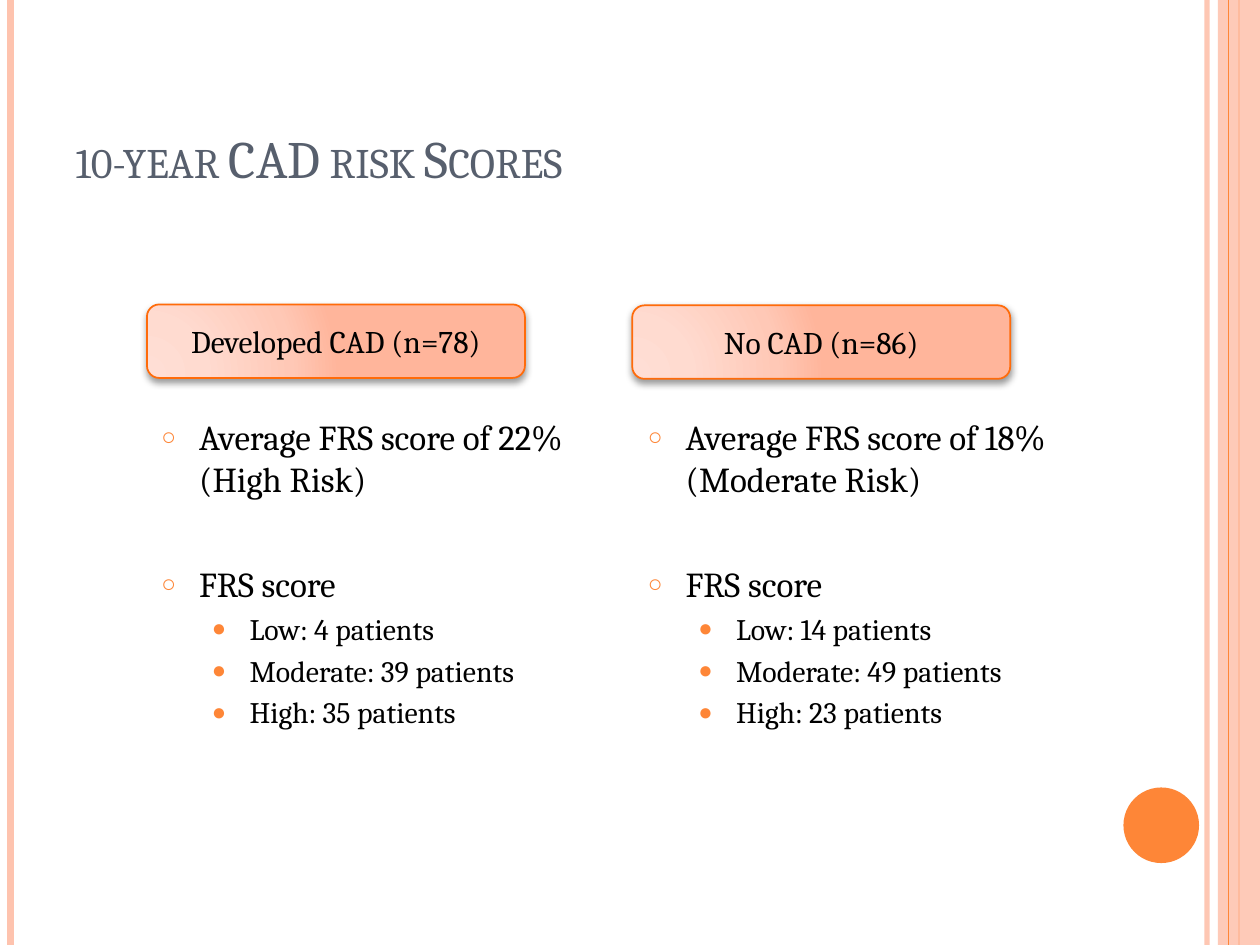
from lxml import etree
from pptx import Presentation
from pptx.dml.color import RGBColor
from pptx.enum.shapes import MSO_CONNECTOR, MSO_SHAPE
from pptx.enum.text import MSO_ANCHOR, MSO_AUTO_SIZE, PP_ALIGN
from pptx.oxml import parse_xml
from pptx.oxml.ns import qn
from pptx.util import Pt

STRAIGHT = MSO_CONNECTOR.STRAIGHT
LEFT, CENTER = PP_ALIGN.LEFT, PP_ALIGN.CENTER
TOP, MIDDLE, BOTTOM = MSO_ANCHOR.TOP, MSO_ANCHOR.MIDDLE, MSO_ANCHOR.BOTTOM
NAMESPACE = 'xmlns:a="http://schemas.openxmlformats.org/drawingml/2006/main"'
FONT = "Cambria"
WIDTH, HEIGHT = 720, 540
COLORS = {
    "accent": "FE8637", "stripe": "FEC3AE", "title": "575F6D",
    "text": "000000", "outline": "FF6B0A",
}
GRADIENT = {0: "FFDED5", 30: "FFDBD0", 75: "FFC8B6", 100: "FFB59B"}
LEVELS = [
    {"size": 20, "margin": 21.6, "bullet": "○", "bullet_size": 70, "before": 6},
    {"size": 17, "margin": 50.4, "bullet": "●", "bullet_size": 80, "before": 3.4},
]
BULLET_INDENT = 21.6
GROUP_GAP = 36
COLUMNS = [
    {
        "label": "Developed CAD (n=78)",
        "label_box": (84, 174, 216, 42),
        "list_box": (85, 234, 245, 204),
        "items": [(0, "Average FRS score of 22% (High Risk)"), (0, "FRS score"),
                  (1, "Low: 4 patients"), (1, "Moderate: 39 patients"),
                  (1, "High: 35 patients")],
    },
    {
        "label": "No CAD (n=86)",
        "label_box": (361.3, 174.5, 216, 42),
        "list_box": (363, 234, 249, 186),
        "items": [(0, "Average FRS score of 18% (Moderate Risk)"), (0, "FRS score"),
                  (1, "Low: 14 patients"), (1, "Moderate: 49 patients"),
                  (1, "High: 23 patients")],
    },
]


def color(name):
    return RGBColor.from_string(COLORS[name])


def place(shape, box):
    for name, value in zip(("left", "top", "width", "height"), box):
        setattr(shape, name, Pt(value))


def add_text(paragraph, text, size, color_name="text"):
    run = paragraph.add_run()
    run.text = text
    values = {"name": FONT, "size": Pt(size), "bold": False}
    for name, value in values.items():
        setattr(run.font, name, value)
    run.font.color.rgb = color(color_name)
    return run


def format_frame(frame, anchor):
    values = {"word_wrap": True, "auto_size": MSO_AUTO_SIZE.NONE,
              "vertical_anchor": anchor}
    for name, value in values.items():
        setattr(frame, name, value)


def set_opacity(shape, percent):
    rgb = next(shape.element.iter(qn("a:srgbClr")))
    etree.SubElement(rgb, qn("a:alpha"), val=str(percent * 1000))


def add_stripe(slide, x, width, color_name):
    line = slide.shapes.add_connector(STRAIGHT, Pt(x), 0, Pt(x), Pt(HEIGHT))
    line.line.width = Pt(width)
    line.line.color.rgb = color(color_name)
    etree.SubElement(line.element.spPr, qn("a:effectLst"))
    return line


def add_plain_shape(slide, kind, box, color_name):
    shape = slide.shapes.add_shape(kind, *(Pt(value) for value in box))
    shape.shadow.inherit = False
    shape.fill.solid()
    shape.fill.fore_color.rgb = color(color_name)
    shape.line.fill.background()
    return shape


def add_frame(slide):
    """Draw the edge stripes and the corner disc."""
    set_opacity(add_stripe(slide, 689.8, 3, "stripe"), 93)
    add_stripe(slide, 6, 4.5, "stripe")
    add_stripe(slide, 708, 1.5, "accent")
    band = add_plain_shape(slide, MSO_SHAPE.RECTANGLE,
                           (696, 0, WIDTH - 696, HEIGHT), "stripe")
    set_opacity(band, 87)
    add_stripe(slide, 702, 0.75, "accent")
    add_plain_shape(slide, MSO_SHAPE.OVAL, (642, 450, 43.2, 43.2), "accent")


def fill_title(title, box, text):
    place(title, box)
    format_frame(title.text_frame, BOTTOM)
    paragraph = title.text_frame.paragraphs[0]
    paragraph.alignment = LEFT
    run = add_text(paragraph, text, 30, "title")
    run.font._element.set("cap", "small")


def add_label(slide, box, text):
    shape = add_plain_shape(slide, MSO_SHAPE.ROUNDED_RECTANGLE, box, "stripe")
    shape.line.color.rgb = color("outline")
    shape.line.width = Pt(1)
    properties = shape.element.spPr
    stops = "".join(f'<a:gs pos="{position * 1000}"><a:srgbClr val="{value}"/></a:gs>'
                    for position, value in GRADIENT.items())
    gradient = parse_xml(
        f'<a:gradFill {NAMESPACE}><a:gsLst>{stops}</a:gsLst><a:path path="circle">'
        '<a:fillToRect l="5000" t="100000" r="120000" b="10000"/></a:path></a:gradFill>')
    properties.replace(properties.find(qn("a:solidFill")), gradient)
    properties.find(qn("a:effectLst")).append(parse_xml(
        f'<a:outerShdw {NAMESPACE} blurRad="{Pt(4)}" dist="{Pt(2)}" dir="5400000" '
        'rotWithShape="0"><a:srgbClr val="000000"><a:alpha val="40000"/></a:srgbClr>'
        '</a:outerShdw>'))
    format_frame(shape.text_frame, MIDDLE)
    paragraph = shape.text_frame.paragraphs[0]
    paragraph.alignment = CENTER
    add_text(paragraph, text, 18)


def set_bullet(paragraph, level):
    properties = paragraph._p.get_or_add_pPr()
    properties.set("marL", str(Pt(level["margin"])))
    properties.set("indent", str(-Pt(BULLET_INDENT)))
    bullet_color = etree.SubElement(properties, qn("a:buClr"))
    etree.SubElement(bullet_color, qn("a:srgbClr"), val=COLORS["accent"])
    etree.SubElement(properties, qn("a:buSzPct"), val=str(level["bullet_size"] * 1000))
    etree.SubElement(properties, qn("a:buChar"), char=level["bullet"])


def fill_list(body, box, items):
    place(body, box)
    frame = body.text_frame
    format_frame(frame, TOP)
    for index, (depth, text) in enumerate(items):
        paragraph = frame.add_paragraph() if index else frame.paragraphs[0]
        level = LEVELS[depth]
        new_group = index > 0 and depth == 0
        values = {"level": depth, "alignment": LEFT,
                  "space_before": Pt(GROUP_GAP if new_group else level["before"])}
        for name, value in values.items():
            setattr(paragraph, name, value)
        set_bullet(paragraph, level)
        add_text(paragraph, text, level["size"])


def main():
    presentation = Presentation()
    presentation.slide_width, presentation.slide_height = Pt(WIDTH), Pt(HEIGHT)
    slide = presentation.slides.add_slide(presentation.slide_layouts[3])
    title, *bodies = slide.placeholders
    add_frame(slide)
    fill_title(title, (36, 21.6, 588, 90), "10-year CAD risk Scores")
    for body, column in zip(bodies, COLUMNS):
        add_label(slide, column["label_box"], column["label"])
        fill_list(body, column["list_box"], column["items"])
    presentation.save("out.pptx")


if __name__ == "__main__":
    main()
